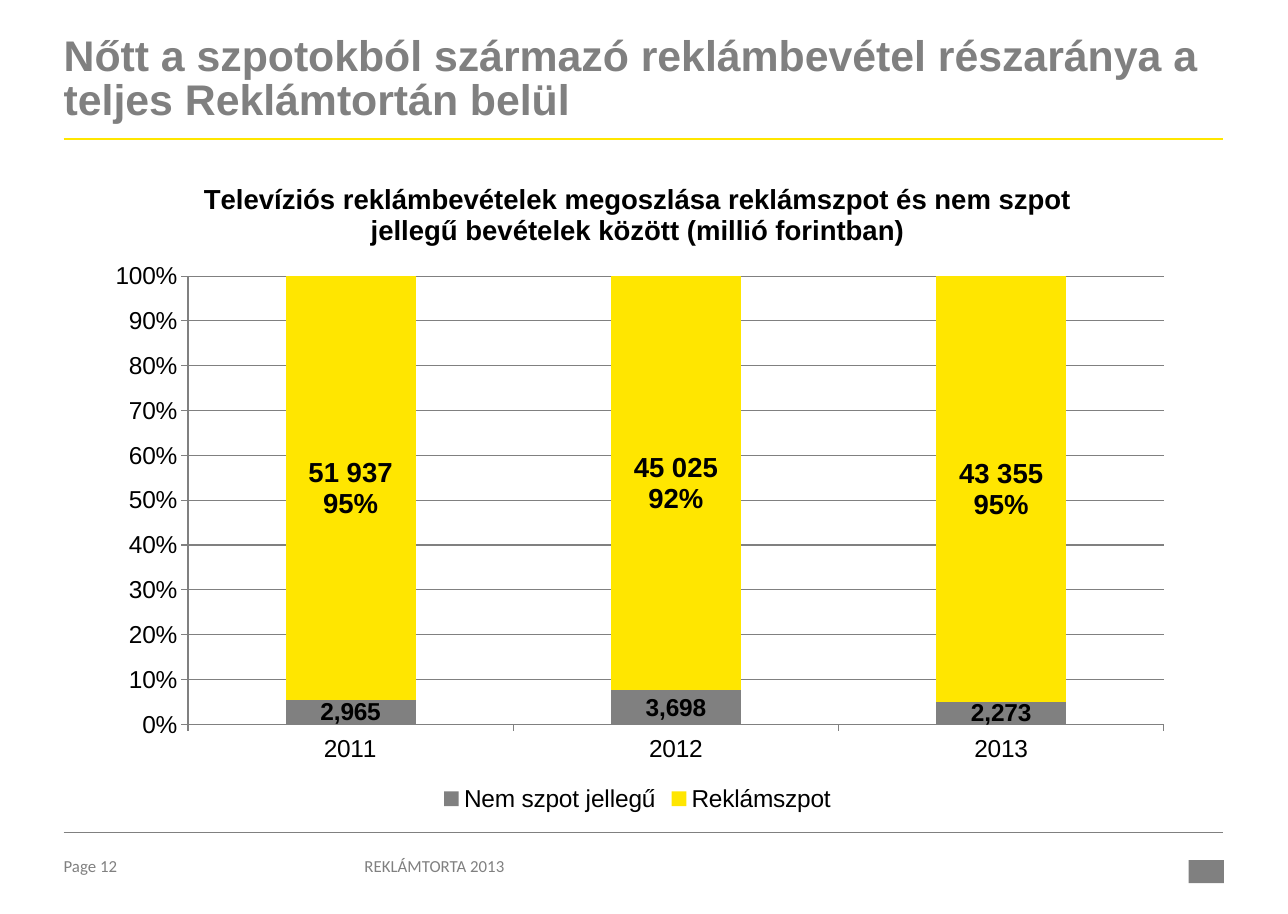
import pptx
import pptx.chart.data
import pptx.dml.color
import pptx.enum.chart
import pptx.enum.shapes
import pptx.enum.text
import pptx.oxml
import pptx.oxml.ns
import pptx.util
from pptx.util import Cm, Pt

GREY, YELLOW, BLACK = "808080", "FFE600", "000000"
LEFT, RIGHT = 1.47, 28.22
YEARS = ["2011", "2012", "2013"]
NON_SPOT = [2965, 3698, 2273]
SPOT = [51937, 45025, 43355]
SPOT_LABELS = ["51 937\n95%", "45 025\n92%", "43 355\n95%"]


def rgb(value):
    return pptx.dml.color.RGBColor.from_string(value)


def set_font(font, size, color=BLACK, bold=False, name="Arial"):
    font.name, font.size, font.bold = name, Pt(size), bold
    font.color.rgb = rgb(color)


def clear_margins(tf):
    tf.margin_left = tf.margin_top = tf.margin_right = tf.margin_bottom = 0
    tf.word_wrap = True
    tf.auto_size = pptx.enum.text.MSO_AUTO_SIZE.NONE
    tf.vertical_anchor = pptx.enum.text.MSO_ANCHOR.TOP


def add_title(s, text):
    title = s.shapes.title
    title.left, title.top = Cm(LEFT), Cm(0.84)
    title.width, title.height = Cm(RIGHT - LEFT), Cm(2.39)
    tf = title.text_frame
    clear_margins(tf)
    tf.text = text
    p = tf.paragraphs[0]
    p.alignment = pptx.enum.text.PP_ALIGN.LEFT
    p.line_spacing = 0.85
    set_font(p.runs[0].font, 28, GREY, True)


def add_rule(s, y, color, width):
    line = s.shapes.add_connector(
        pptx.enum.shapes.MSO_CONNECTOR.STRAIGHT, Cm(LEFT), Cm(y), Cm(RIGHT), Cm(y))
    line.line.color.rgb = rgb(color)
    line.line.width = Pt(width)
    line._element.spPr.append(pptx.oxml.parse_xml(
        f"<a:effectLst {pptx.oxml.ns.nsdecls('a')}/>"))


def add_footer(s, x, width, text):
    tf = s.shapes.add_textbox(Cm(x), Cm(19.74), Cm(width), Cm(0.61)).text_frame
    clear_margins(tf)
    tf.text = text
    set_font(tf.paragraphs[0].runs[0].font, 11, GREY, name="Calibri")


def add_logo_block(s):
    block = s.shapes.add_shape(
        pptx.enum.shapes.MSO_SHAPE.RECTANGLE, Cm(27.43), Cm(19.84), Cm(0.81), Cm(0.53))
    block.shadow.inherit = False
    block.fill.solid()
    block.fill.fore_color.rgb = rgb(GREY)
    block.line.fill.background()


def set_plot_area(chart, x, y, w, h):
    """Place the inner plot area, in fractions of the chart frame."""
    plot_area = chart._chartSpace.chart.plotArea
    for old in plot_area.findall(pptx.oxml.ns.qn("c:layout")):
        plot_area.remove(old)
    sizes = "".join(f'<c:{tag} val="{val}"/>' for tag, val in zip("xywh", (x, y, w, h)))
    plot_area.insert(0, pptx.oxml.parse_xml(
        f"<c:layout {pptx.oxml.ns.nsdecls('c')}><c:manualLayout>"
        '<c:layoutTarget val="inner"/><c:xMode val="edge"/><c:yMode val="edge"/>'
        f"{sizes}</c:manualLayout></c:layout>"))


def style_axis(axis):
    axis.major_tick_mark = pptx.enum.chart.XL_TICK_MARK.OUTSIDE
    axis.minor_tick_mark = pptx.enum.chart.XL_TICK_MARK.NONE
    axis.format.line.color.rgb = rgb(GREY)
    set_font(axis.tick_labels.font, 16)


def style_series(series, color, label_size):
    series.format.fill.solid()
    series.format.fill.fore_color.rgb = rgb(color)
    labels = series.data_labels
    labels.show_value = True
    labels.number_format = "#,##0"
    labels.number_format_is_linked = False
    labels.position = pptx.enum.chart.XL_LABEL_POSITION.CENTER
    set_font(labels.font, label_size, bold=True)


def label_point(point, text):
    tf = point.data_label.text_frame
    tf.text = text
    for p in tf.paragraphs:
        set_font(p.runs[0].font, 18, bold=True)
    point.data_label.position = pptx.enum.chart.XL_LABEL_POSITION.CENTER


def add_revenue_chart(s):
    data = pptx.chart.data.CategoryChartData(number_format="#,##0")
    data.categories = YEARS
    data.add_series("Nem szpot jellegű", NON_SPOT)
    data.add_series("Reklámszpot", SPOT)
    chart = s.shapes.add_chart(
        pptx.enum.chart.XL_CHART_TYPE.COLUMN_STACKED_100,
        Cm(2.06), Cm(3.63), Cm(25.3), Cm(15.21), data).chart
    set_font(chart.font, 18)

    chart.has_title = True
    tf = chart.chart_title.text_frame
    tf.text = ("Televíziós reklámbevételek megoszlása reklámszpot és nem szpot "
               "jellegű bevételek között (millió forintban)")
    set_font(tf.paragraphs[0].runs[0].font, 18, bold=True)
    chart.chart_title.include_in_layout = False

    chart.has_legend = True
    chart.legend.position = pptx.enum.chart.XL_LEGEND_POSITION.BOTTOM
    chart.legend.include_in_layout = False
    set_font(chart.legend.font, 16)

    style_axis(chart.category_axis)
    axis = chart.value_axis
    style_axis(axis)
    axis.has_major_gridlines = True
    axis.major_gridlines.format.line.color.rgb = rgb(GREY)
    axis.minimum_scale, axis.maximum_scale, axis.major_unit = 0, 1, 0.1
    axis.tick_labels.number_format = "0%"
    axis.tick_labels.number_format_is_linked = False

    plot = chart.plots[0]
    plot.gap_width, plot.overlap = 150, 100
    plot.vary_by_categories = False
    non_spot, spot = plot.series
    style_series(non_spot, GREY, 16)
    style_series(spot, YELLOW, 18)
    for i, text in enumerate(SPOT_LABELS):
        label_point(spot.points[i], text)
    set_plot_area(chart, 0.09, 0.18, 0.89, 0.68)


def main():
    prs = pptx.Presentation()
    prs.slide_width, prs.slide_height = Cm(29.72), Cm(21.08)
    s = prs.slides.add_slide(prs.slide_layouts.get_by_name("Title Only"))
    add_title(s, "Nőtt a szpotokból származó reklámbevétel részaránya "
                 "a teljes Reklámtortán belül")
    add_rule(s, 3.2, YELLOW, 1.5)
    add_rule(s, 19.2, GREY, 0.25)
    add_revenue_chart(s)
    add_footer(s, LEFT, 2.16, "Page 12")
    add_footer(s, 8.41, 11.15, "REKLÁMTORTA 2013")
    add_logo_block(s)
    prs.save("out.pptx")


if __name__ == "__main__":
    main()
